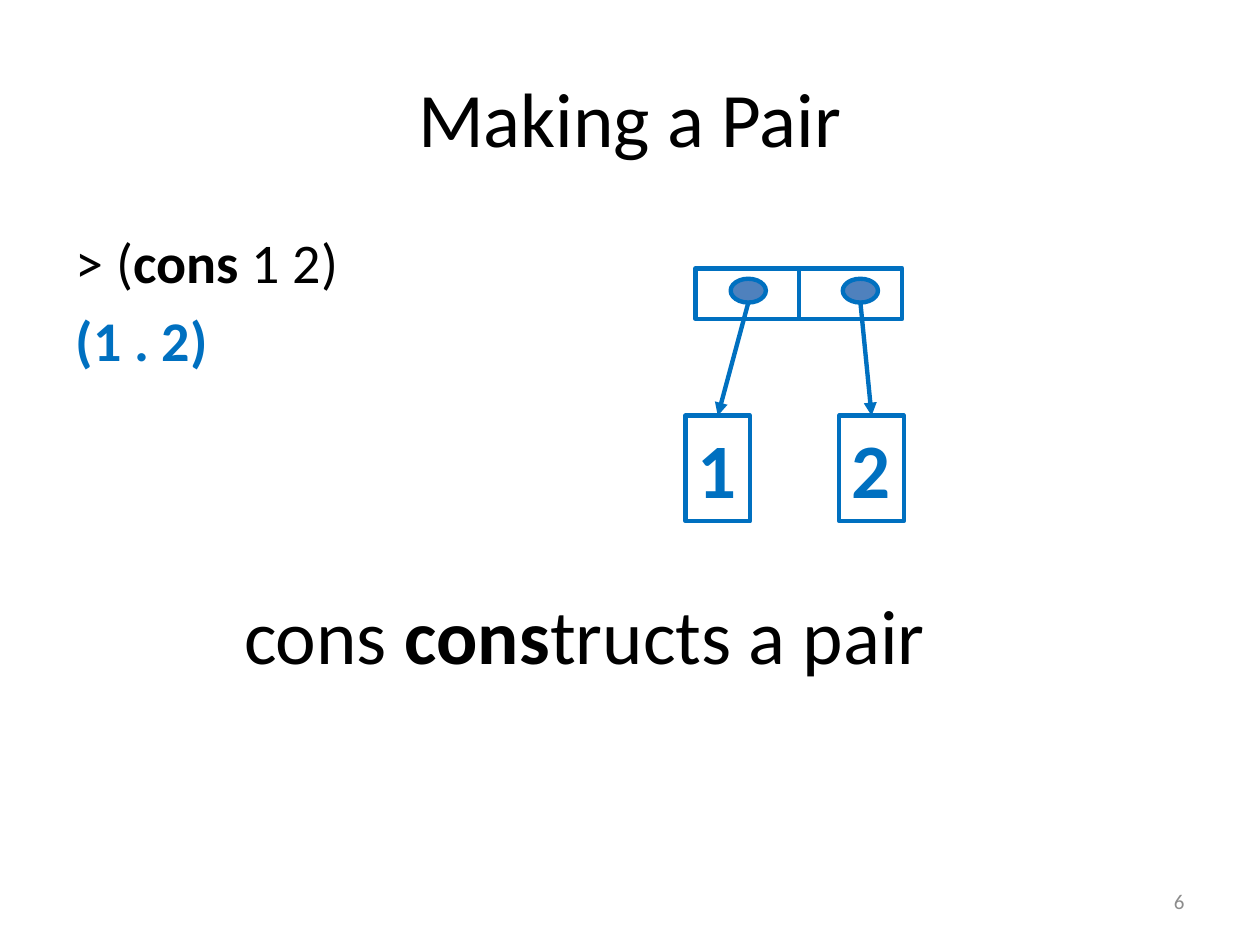
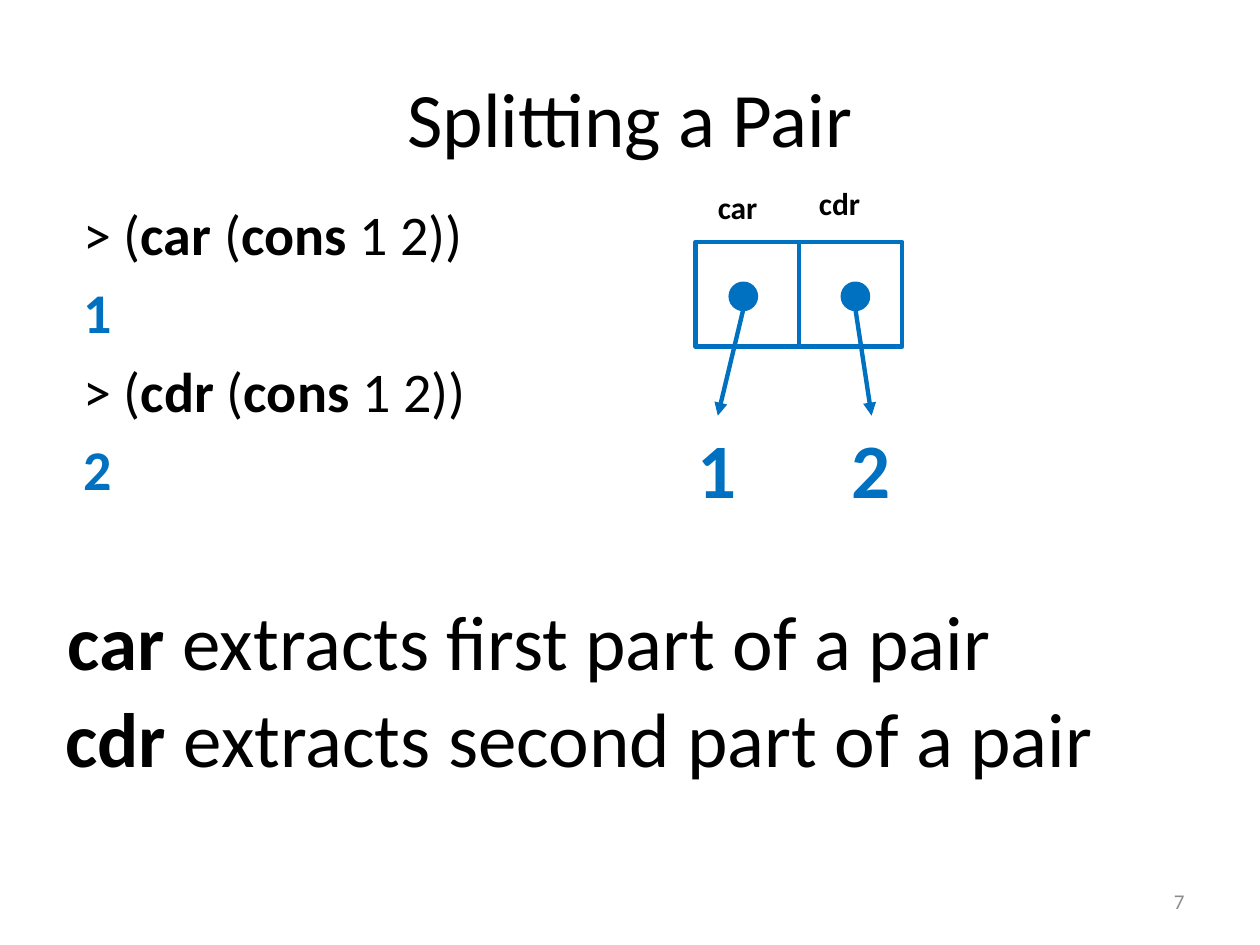
from pptx import Presentation
from pptx.dml.color import RGBColor
from pptx.enum import shapes, text
from pptx.oxml.ns import qn
from pptx.util import Cm, Pt
from lxml import etree

BLUE, STEEL, BLACK, GREY = "0070C0", "4F81BD", "000000", "8C8C8C"
FONT = "Calibri"


def write(tf, txt, size=44, color=BLACK, align=None, bold=False):
    """Append one paragraph to tf; parts between asterisks are bold."""
    p = tf.paragraphs[-1]
    if p.runs:
        p = tf.add_paragraph()
    p.alignment = align
    for i, part in enumerate(txt.split("*")):
        if part:
            r = p.add_run()
            r.text = part
            r.font.name, r.font.size = FONT, Pt(size)
            r.font.bold = bold or i % 2 == 1
            r.font.color.rgb = RGBColor.from_string(color)
    return p


def outline(sp, arrow=False):
    """Give a shape or connector the blue line, without a shadow."""
    sp.line.color.rgb = RGBColor.from_string(BLUE)
    sp.line.width = Pt(2.5)
    if arrow:
        etree.SubElement(sp.line._get_or_add_ln(), qn("a:tailEnd"), type="triangle")
    if sp.shape_type == shapes.MSO_SHAPE_TYPE.LINE:
        etree.SubElement(sp._element.spPr, qn("a:effectLst"))
    else:
        sp.shadow.inherit = False


# Lengths in the slide data are centimetres
PAIR_LEFT, PAIR_WIDTH = 14.02, 4.17
VALUE_TOP, VALUE_WIDTH, VALUE_HEIGHT = 8.38, 1.3, 2.13
VALUES = [("1", 13.82, 14.73), ("2", 16.92, 16.99)]  # value, its left, left of its dot

slides = [
    dict(number=6, title="Making a Pair",
         body=(1.27, 4.45, 22.86, 12.57),
         code=["> (*cons* 1 2)", "(1 . 2)"],
         captions=[("cons *cons*tructs a pair", 4.67, 11.71, 15.93, 2.11)],
         boxed=True, pair_top=5.41, pair_height=1.02,
         dot_top=5.62, dot_size=(0.71, 0.48), dot_fill=STEEL),
    dict(number=7, title="Splitting a Pair",
         body=(1.42, 3.89, 22.86, 7.39),
         code=["> (*car* (*cons* 1 2))", "1", "> (*cdr* (*cons* 1 2))", "2"],
         captions=[("*car* extracts first part of a pair", 1.12, 11.84, 21.36, 2.11),
                   ("*cdr* extracts second part of a pair", 1.07, 13.79, 23.6, 2.11),
                   ("*car*", 14.22, 3.66, 1.5, 1.02, 18),
                   ("*cdr*", 16.26, 3.58, 1.52, 1.02, 18)],
         boxed=False, pair_top=4.88, pair_height=2.11,
         dot_top=5.72, dot_size=(0.51, 0.51), dot_fill=BLUE),
]

prs = Presentation()
prs.slide_width, prs.slide_height = Cm(25.4), Cm(19.05)

for d in slides:
    s = prs.slides.add_slide(prs.slide_layouts[1])
    title, body = s.placeholders[0], s.placeholders[1]
    for sp, box in ((title, (1.27, 0.76, 22.86, 3.18)), (body, d["body"])):
        sp.left, sp.top, sp.width, sp.height = map(Cm, box)
        sp.text_frame.auto_size = text.MSO_AUTO_SIZE.NONE
    write(title.text_frame, d["title"], align=text.PP_ALIGN.CENTER)

    for line in d["code"]:
        is_result = not line.startswith(">")
        p = write(body.text_frame, line, 32, BLUE if is_result else BLACK, bold=is_result)
        etree.SubElement(p._p.get_or_add_pPr(), qn("a:buNone"))

    for caption, x, y, w, h, *size in d["captions"]:
        tf = s.shapes.add_textbox(Cm(x), Cm(y), Cm(w), Cm(h)).text_frame
        tf.word_wrap = False
        write(tf, caption, *size)

    # Pair cell with its divider
    top, bottom = d["pair_top"], d["pair_top"] + d["pair_height"]
    cell = s.shapes.add_shape(shapes.MSO_SHAPE.RECTANGLE, Cm(PAIR_LEFT), Cm(top),
                              Cm(PAIR_WIDTH), Cm(d["pair_height"]))
    cell.fill.background()
    outline(cell)
    middle = Cm(PAIR_LEFT + PAIR_WIDTH / 2)
    outline(s.shapes.add_connector(shapes.MSO_CONNECTOR.STRAIGHT,
                                   middle, Cm(top), middle, Cm(bottom)))

    # Each half points to its value
    dot_w, dot_h = d["dot_size"]
    for value, x, dot_x in VALUES:
        box = s.shapes.add_textbox(Cm(x), Cm(VALUE_TOP), Cm(VALUE_WIDTH), Cm(VALUE_HEIGHT))
        box.text_frame.word_wrap = False
        write(box.text_frame, value, color=BLUE, bold=True)
        if d["boxed"]:
            outline(box)
        arrow = s.shapes.add_connector(
            shapes.MSO_CONNECTOR.STRAIGHT, Cm(dot_x + dot_w / 2), Cm(d["dot_top"] + dot_h),
            Cm(x + VALUE_WIDTH / 2), Cm(VALUE_TOP))
        outline(arrow, arrow=True)
        dot = s.shapes.add_shape(shapes.MSO_SHAPE.OVAL, Cm(dot_x), Cm(d["dot_top"]),
                                 Cm(dot_w), Cm(dot_h))
        dot.fill.solid()
        dot.fill.fore_color.rgb = RGBColor.from_string(d["dot_fill"])
        outline(dot)

    tf = s.shapes.add_textbox(Cm(18.21), Cm(17.65), Cm(5.92), Cm(1.02)).text_frame
    tf.word_wrap = True
    tf.vertical_anchor = text.MSO_ANCHOR.MIDDLE
    write(tf, str(d["number"]), 12, GREY, text.PP_ALIGN.RIGHT)

prs.save("out.pptx")
